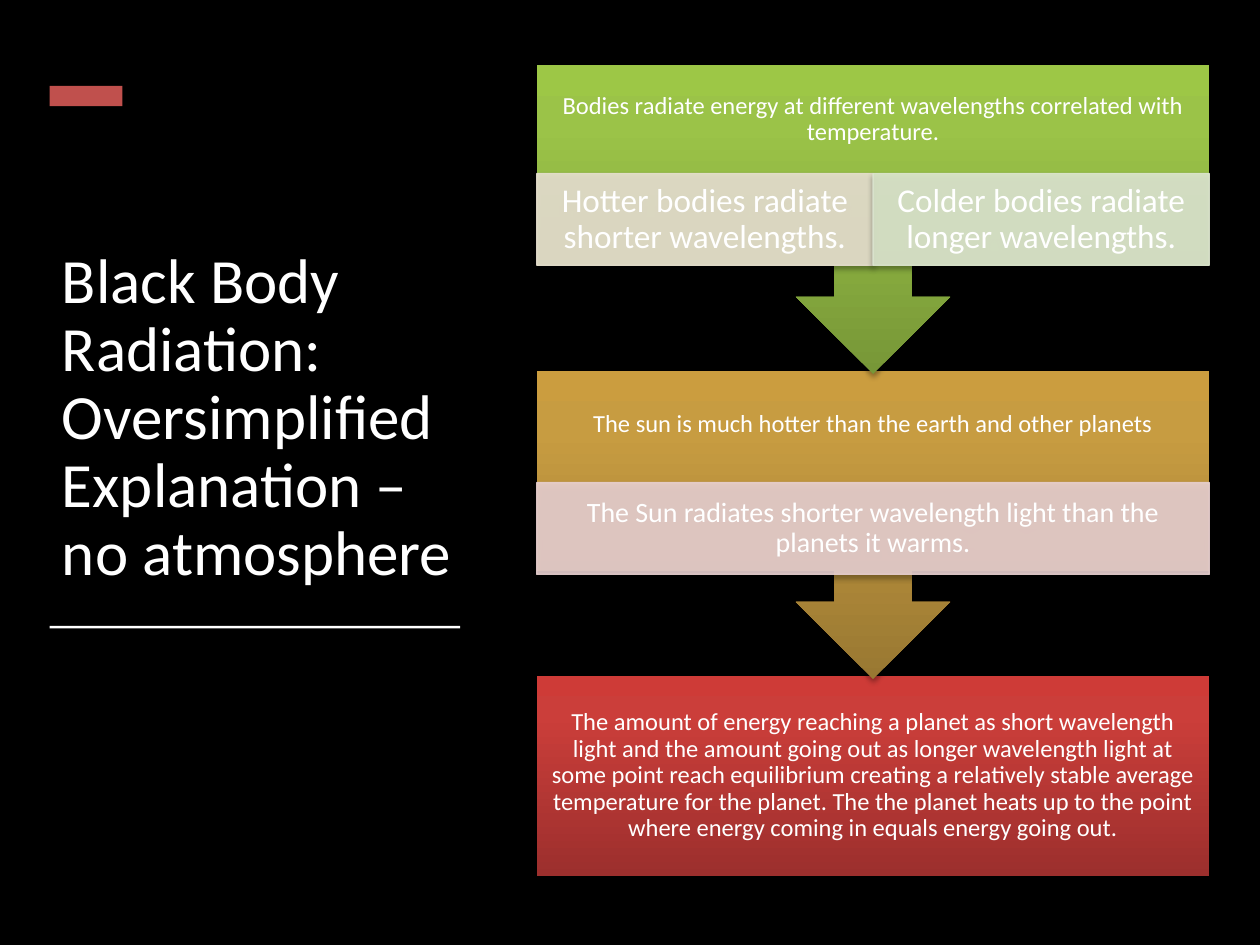
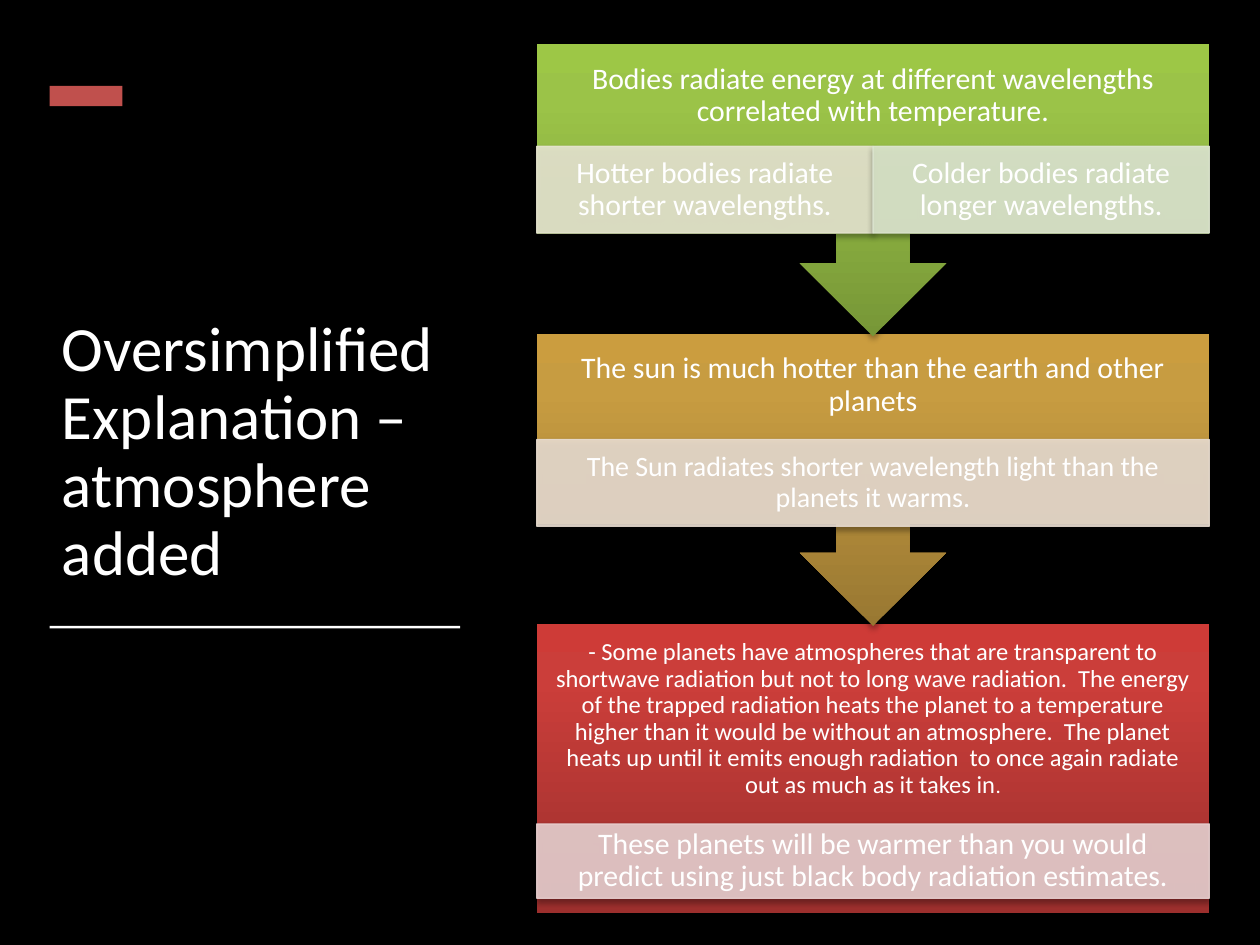
import copy

import pptx
import pptx.dml.color
import pptx.enum.shapes
import pptx.enum.text
import pptx.oxml.ns
import pptx.util
from lxml import etree

Cm = pptx.util.Cm
qn = pptx.oxml.ns.qn
Shapes = pptx.enum.shapes.MSO_SHAPE
Anchor = pptx.enum.text.MSO_ANCHOR
Align = pptx.enum.text.PP_ALIGN

COLORS = {"black": "000000", "white": "FFFFFF", "accent": "C0504D",
          "sand": "E8E1D1", "lime": "E7E6D1", "sage": "DEE7D1",
          "rose": "E8D0D0", "tan": "E8DCD0"}

# Gradients run from the bottom of a box to its top
GRADIENTS = {"green": ("779737", "9BC348", "9DC746"),
             "gold": ("997832", "C79C41", "CB9D3F"),
             "red": ("9C2F2D", "CB3E3A", "CE3B37")}
STOP_POSITIONS = (0, 0.8, 1)

# The flow column, in centimetres
FLOW_LEFT, FLOW_WIDTH = 10.82, 13.56
CALLOUT_BOX_SHARE = 0.65  # part of a callout above its arrow

BODIES = "Bodies radiate energy at different wavelengths correlated with temperature."
HOTTER = "Hotter bodies radiate shorter wavelengths."
COLDER = "Colder bodies radiate longer wavelengths."
SUN = "The sun is much hotter than the earth and other planets"
SUNLIGHT = "The Sun radiates shorter wavelength light than the planets it warms."
EQUILIBRIUM = (
    "The amount of energy reaching a planet as short wavelength light and the amount "
    "going out as longer wavelength light at some point reach equilibrium creating a "
    "relatively stable average temperature for the planet. The the planet heats up to "
    "the point where energy coming in equals energy going out.")
TRAPPED = (
    "- Some planets have atmospheres that are transparent to shortwave radiation but "
    "not to long wave radiation.  The energy of the trapped radiation heats the planet "
    "to a temperature higher than it would be without an atmosphere.  The planet heats "
    "up until it emits enough radiation  to once again radiate out as much as it takes in")
WARMER = ("These planets will be warmer than you would predict using just black body "
          "radiation estimates.")

# Each step: gradient, runs, height, text height, tags.
# Tags: offset below the step's top, height, size, then (text, colour) pairs.
SLIDES = [
    {"title": "Black Body Radiation: Oversimplified Explanation – no atmosphere",
     "top": 1.32, "pitch": 6.15,
     "steps": [
         ("green", [(BODIES, 14)], 6.22, 2.18,
          (2.18, 1.85, 19, [(HOTTER, "sand"), (COLDER, "sage")])),
         ("gold", [(SUN, 14)], 6.22, 2.18,
          (2.26, 1.85, 16, [(SUNLIGHT, "rose")])),
         ("red", [(EQUILIBRIUM, 14)], 4.04, 4.04, None)]},
    {"title": "Oversimplified Explanation – atmosphere added",
     "top": 0.89, "pitch": 5.84,
     "steps": [
         ("green", [(BODIES, 17)], 5.89, 2.08,
          (2.06, 1.75, 17, [(HOTTER, "lime"), (COLDER, "sage")])),
         ("gold", [(SUN, 17)], 5.89, 2.08,
          (2.13, 1.75, 16, [(SUNLIGHT, "tan")])),
         ("red", [(TRAPPED, 14), (".", 12)], 5.84, 3.86,
          (4.04, 1.5, 17, [(WARMER, "rose")]))]},
]


def rgb(value):
    return pptx.dml.color.RGBColor.from_string(value)


class FlowDeck:
    """Holds the shared style and the slide being filled."""

    font = "Calibri"

    def __init__(self):
        self.deck = pptx.Presentation()
        self.deck.slide_width, self.deck.slide_height = Cm(25.4), Cm(19.05)
        self.page = None

    def new_page(self, title):
        self.page = self.deck.slides.add_slide(self.deck.slide_layouts[6])
        self.page.background.fill.solid()
        self.page.background.fill.fore_color.rgb = rgb(COLORS["black"])
        # Accent block, title and rule
        self.rect(1, 1.73, 1.47, 0.41, "accent")
        box = self.page.shapes.add_textbox(Cm(1), Cm(3.12), Cm(8.38), Cm(8.89))
        self.add_text(box, [(title, 36)], Align.LEFT, Anchor.BOTTOM,
                      (0.25, 0.13, 0.25, 0.13))
        self.rect(1, 12.62, 8.28, 0.05, "white")

    def shape(self, kind, left, top, width, height):
        shape = self.page.shapes.add_shape(kind, Cm(left), Cm(top), Cm(width), Cm(height))
        shape.shadow.inherit = False
        shape.line.fill.background()
        return shape

    def rect(self, left, top, width, height, color):
        shape = self.shape(Shapes.RECTANGLE, left, top, width, height)
        shape.fill.solid()
        shape.fill.fore_color.rgb = rgb(COLORS[color])
        return shape

    def add_text(self, box, runs, align, anchor, insets):
        frame = box.text_frame
        frame.word_wrap = True
        frame.vertical_anchor = anchor
        (frame.margin_left, frame.margin_top,
         frame.margin_right, frame.margin_bottom) = map(Cm, insets)
        para = frame.paragraphs[0]
        para.alignment = align
        para.line_spacing = 0.9
        for text, size in runs:
            span = para.add_run()
            span.text = text
            span.font.name = self.font
            span.font.size = pptx.util.Pt(size)
            span.font.color.rgb = rgb(COLORS["white"])

    def gradient(self, shape, name):
        shape.fill.gradient()
        shape.fill.gradient_angle = 90
        stop_list = shape._element.spPr.find(".//" + qn("a:gsLst"))
        stop_list.insert(1, copy.deepcopy(stop_list[0]))
        for stop, position, color in zip(shape.fill.gradient_stops, STOP_POSITIONS,
                                         GRADIENTS[name]):
            stop.position = position
            stop.color.rgb = rgb(color)

    def alpha(self, color, percent):
        etree.SubElement(color, qn("a:alpha")).set("val", str(percent * 1000))

    def shadow(self, shape):
        effects = shape._element.spPr.find(qn("a:effectLst"))
        outer = etree.SubElement(effects, qn("a:outerShdw"), blurRad="40000",
                                 dist="23000", dir="5400000", rotWithShape="0")
        color = etree.SubElement(outer, qn("a:srgbClr"), val=COLORS["black"])
        self.alpha(color, 35)

    def step(self, kind, top, gradient, runs, height, text_height):
        shape = self.shape(kind, FLOW_LEFT, top, FLOW_WIDTH, height)
        self.gradient(shape, gradient)
        self.shadow(shape)
        share = CALLOUT_BOX_SHARE if kind == Shapes.DOWN_ARROW_CALLOUT else 1
        inset = 0.02 * runs[0][1]
        below = height * share - text_height + inset
        self.add_text(shape, runs, Align.CENTER, Anchor.MIDDLE,
                      (inset, inset, inset, below))

    def tags(self, top, height, size, items):
        width = FLOW_WIDTH / len(items)
        inset = 0.02 * size
        for index, (text, color) in enumerate(items):
            tag = self.rect(FLOW_LEFT + index * width, top, width, height, color)
            tag.line.color.rgb = rgb(COLORS[color])
            tag.line.width = pptx.util.Pt(0.75)
            for node in tag._element.spPr.findall(".//" + qn("a:srgbClr")):
                self.alpha(node, 90)
            self.shadow(tag)
            self.add_text(tag, [(text, size)], Align.CENTER, Anchor.MIDDLE,
                          (inset, 0.06, inset, 0.06))

    def flow(self, top, pitch, steps):
        # From the last step up, so that each arrow tip lies over the next box
        last = len(steps) - 1
        for index in range(last, -1, -1):
            gradient, runs, height, text_height, tags = steps[index]
            kind = Shapes.RECTANGLE if index == last else Shapes.DOWN_ARROW_CALLOUT
            step_top = top + index * pitch
            self.step(kind, step_top, gradient, runs, height, text_height)
            if tags:
                offset, *rest = tags
                self.tags(step_top + offset, *rest)


def main():
    slides = FlowDeck()
    for content in SLIDES:
        slides.new_page(content["title"])
        slides.flow(content["top"], content["pitch"], content["steps"])
    slides.deck.save("out.pptx")


if __name__ == "__main__":
    main()
